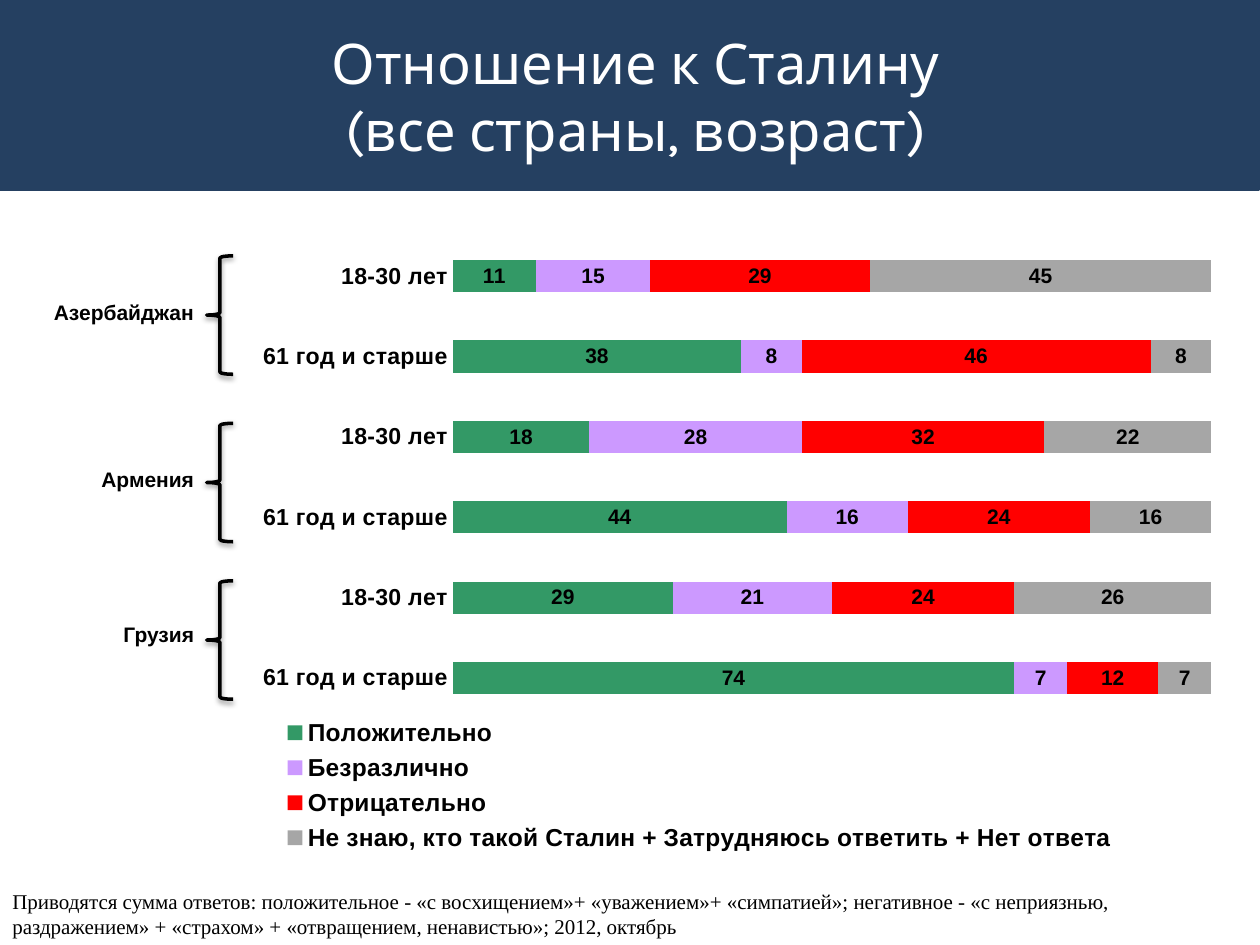
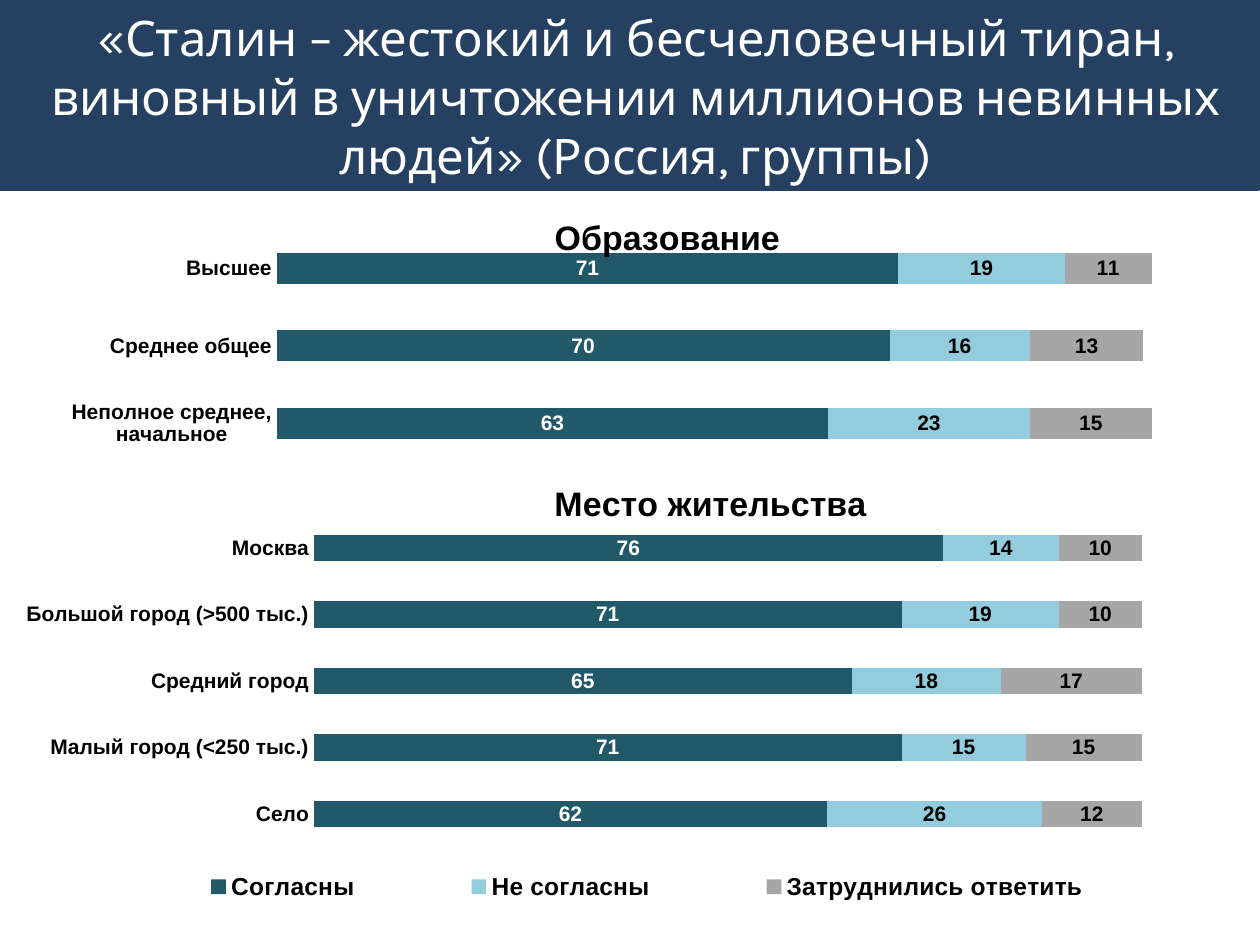
from lxml import etree
from pptx import Presentation
from pptx.chart.data import CategoryChartData as ChartData
from pptx.dml.color import RGBColor
from pptx.enum.chart import XL_CHART_TYPE as Kind, XL_LABEL_POSITION as Spot
from pptx.enum.chart import XL_LEGEND_POSITION as Side, XL_TICK_MARK as Tick
from pptx.enum.shapes import MSO_SHAPE as Form
from pptx.enum.text import MSO_ANCHOR as Anchor, PP_ALIGN as Align
from pptx.oxml import parse_xml
from pptx.oxml.ns import nsdecls, qn
from pptx.util import Pt

NAVY = RGBColor(0x25, 0x40, 0x61)
WHITE = RGBColor(0xFF, 0xFF, 0xFF)
BLACK = RGBColor(0, 0, 0)
GREEN = RGBColor(0x33, 0x99, 0x66)
LILAC = RGBColor(0xCC, 0x99, 0xFF)
RED = RGBColor(0xFF, 0, 0)
GRAY = RGBColor(0xA6, 0xA6, 0xA6)
TEAL = RGBColor(0x21, 0x59, 0x68)
SKY = RGBColor(0x93, 0xCD, 0xDD)

ANSWERS = ["Согласны", "Не согласны", "Затруднились ответить"]
HUES = [TEAL, SKY, GRAY]


def style(font, size, color=BLACK, name="Arial", bold=True):
    font.size = Pt(size)
    font.name = name
    font.bold = bold
    font.color.rgb = color


def add_text(slide, box, lines, size, color, name, align=Align.LEFT):
    """Add a middle-anchored box whose lines are parted by line breaks."""
    frame = slide.shapes.add_textbox(*map(Pt, box)).text_frame
    frame.word_wrap = True
    frame.vertical_anchor = Anchor.MIDDLE
    par = frame.paragraphs[0]
    par.alignment = align
    for i, line in enumerate(lines):
        if i:
            par.add_line_break()
        run = par.add_run()
        run.text = line
        style(run.font, size, color, name, False)


def add_band(slide):
    band = slide.shapes.add_shape(Form.RECTANGLE, 0, 0, Pt(719.3), Pt(108))
    band.shadow.inherit = False
    band.fill.solid()
    band.fill.fore_color.rgb = NAVY
    band.line.color.rgb = NAVY
    band.line.width = Pt(2)


def add_title(slide, lines, size):
    add_text(slide, (14.4, 9.4, 697.7, 90.7), lines, size, WHITE, "Karla",
             Align.CENTER)


def place(node, index, spot, inner=False):
    """Give a chart part a manual layout, in fractions of the chart."""
    for old in node.findall(qn("c:layout")):
        node.remove(old)
    layout = parse_xml(f"<c:layout {nsdecls('c')}><c:manualLayout/></c:layout>")
    pairs = [("layoutTarget", "inner")] if inner else []
    pairs += [("xMode", "edge"), ("yMode", "edge"), *zip("xywh", spot)]
    for tag, val in pairs:
        etree.SubElement(layout[0], qn("c:" + tag)).set("val", str(val))
    node.insert(index, layout)


def set_axes(chart, size):
    cat = chart.category_axis
    cat.reverse_order = True
    cat.major_tick_mark = Tick.NONE
    cat.format.line.fill.background()
    style(cat.tick_labels.font, size)
    val = chart.value_axis
    val.visible = False
    val.minimum_scale = 0
    val.maximum_scale = 100
    val.major_unit = 10
    grid = val.major_gridlines.format.line
    grid.color.rgb = WHITE
    grid.width = Pt(1)


def add_bars(slide, box, cats, rows, plot, size=12):
    """Add a stacked bar chart; rows hold name, values and colour."""
    data = ChartData()
    data.categories = cats
    for name, vals, _ in rows:
        data.add_series(name, vals)
    chart = slide.shapes.add_chart(
        Kind.BAR_STACKED, *map(Pt, box), data).chart
    style(chart.font, 16.2)
    chart.has_title = False
    chart.has_legend = False
    set_axes(chart, size)
    bars = chart.plots[0]
    bars.vary_by_categories = False
    bars.overlap = 100
    bars.gap_width = 150
    for row, (_, _, color) in zip(bars.series, rows):
        row.format.fill.solid()
        row.format.fill.fore_color.rgb = color
        labels = row.data_labels
        labels.show_value = True
        labels.position = Spot.CENTER
        style(labels.font, 12, WHITE if color == TEAL else BLACK)
    place(chart.element.find(".//" + qn("c:plotArea")), 0, plot, True)
    return chart


def add_head(chart, text, spot):
    """Title the chart, over the plot."""
    chart.has_title = True
    run = chart.chart_title.text_frame.paragraphs[0].add_run()
    run.text = text
    style(run.font, 19.4)
    node = chart.element.find(".//" + qn("c:title"))
    place(node, 1, spot)
    node.find(qn("c:overlay")).set("val", "1")


def add_key(chart, spot):
    """Add the legend below the plot."""
    chart.has_legend = True
    chart.legend.position = Side.BOTTOM
    chart.legend.include_in_layout = False
    style(chart.legend.font, 14)
    place(chart.element.find(".//" + qn("c:legend")), 1, spot)


def add_lands(slide, lands):
    """List the countries in a clear table; lands hold name and top inset."""
    table = slide.shapes.add_table(
        len(lands), 1, Pt(11.5), Pt(123.8), Pt(106.6), Pt(286.8)).table
    table.first_row = False
    table.horz_banding = False
    for i, (name, inset) in enumerate(lands):
        cell = table.cell(i, 0)
        cell.fill.background()
        cell.vertical_anchor = Anchor.MIDDLE
        cell.margin_top = Pt(inset)
        par = cell.text_frame.paragraphs[0]
        par.alignment = Align.RIGHT
        run = par.add_run()
        run.text = name
        style(run.font, 12)


def add_brace(slide, top):
    brace = slide.shapes.add_shape(
        Form.LEFT_BRACE, Pt(118.1), Pt(top), Pt(15.1), Pt(67.7))
    brace.fill.background()
    brace.line.color.rgb = BLACK
    brace.line.width = Pt(2)
    brace.element.spPr.append(parse_xml(
        f'<a:effectLst {nsdecls("a")}>'
        f'<a:outerShdw blurRad="{Pt(3.1)}" dist="{Pt(1.6)}" dir="5400000" '
        'rotWithShape="0"><a:srgbClr val="000000"><a:alpha val="38000"/>'
        '</a:srgbClr></a:outerShdw></a:effectLst>'))


def build_ages(slide):
    add_band(slide)
    add_title(slide, ["Отношение к Сталину", "(все страны, возраст)"], 32)
    add_text(slide, (0, 504, 692, 36), [
        "Приводятся сумма ответов: положительное - «с восхищением»+ "
        "«уважением»+ «симпатией»; негативное - «с неприязнью, раздражением» "
        "+ «страхом» + «отвращением, ненавистью»; 2012, октябрь"],
        12, BLACK, "Times New Roman")
    rows = [
        ("Положительно", [11, 38, 18, 44, 29, 74], GREEN),
        ("Безразлично", [15, 8, 28, 16, 21, 7], LILAC),
        ("Отрицательно", [29, 46, 32, 24, 24, 12], RED),
        ("Не знаю, кто такой Сталин + Затрудняюсь ответить + Нет ответа",
         [45, 8, 22, 16, 26, 7], GRAY)]
    chart = add_bars(slide, (20.2, 123.8, 672.5, 382.3),
                     ["18-30 лет", "61 год и старше"] * 3, rows,
                     (0.355, 0.029, 0.645, 0.721), 13.2)
    add_key(chart, (0.2, 0.74, 0.73, 0.22))
    add_lands(slide, [("Азербайджан", 18), ("Армения", 18), ("Грузия", 3.6)])
    for top in (146.2, 241.9, 331.9):
        add_brace(slide, top)


def build_groups(slide):
    towns = [[76, 71, 65, 71, 62], [14, 19, 18, 15, 26], [10, 10, 17, 15, 12]]
    chart = add_bars(slide, (0, 258.5, 732.2, 264.2),
                     ["Москва", "Большой город (>500 тыс.)", "Средний город",
                      "Малый город (<250 тыс.)", "Село"],
                     list(zip(ANSWERS, towns, HUES)),
                     (0.245, 0.135, 0.646, 0.72))
    add_head(chart, "Место жительства", (0.428, 0.048))
    add_key(chart, (0.08, 0.89, 0.85, 0.1))
    add_band(slide)
    schools = [[71, 70, 63], [19, 16, 23], [11, 13, 15]]
    chart = add_bars(slide, (11.5, 112.3, 672.5, 157.7),
                     ["Высшее", "Среднее общее", "Неполное среднее, начальное"],
                     list(zip(ANSWERS, schools, HUES)),
                     (0.218, 0.12, 0.744, 0.843))
    add_head(chart, "Образование", (0.449, 0.045))
    add_title(slide, ["«Сталин – жестокий и бесчеловечный тиран,",
                      "виновный в уничтожении миллионов невинных людей» "
                      "(Россия, группы)"], 28)


def main():
    deck = Presentation()
    deck.slide_width = Pt(720)
    deck.slide_height = Pt(540)
    for build in (build_ages, build_groups):
        build(deck.slides.add_slide(deck.slide_layouts[6]))
    deck.save("out.pptx")


if __name__ == "__main__":
    main()
